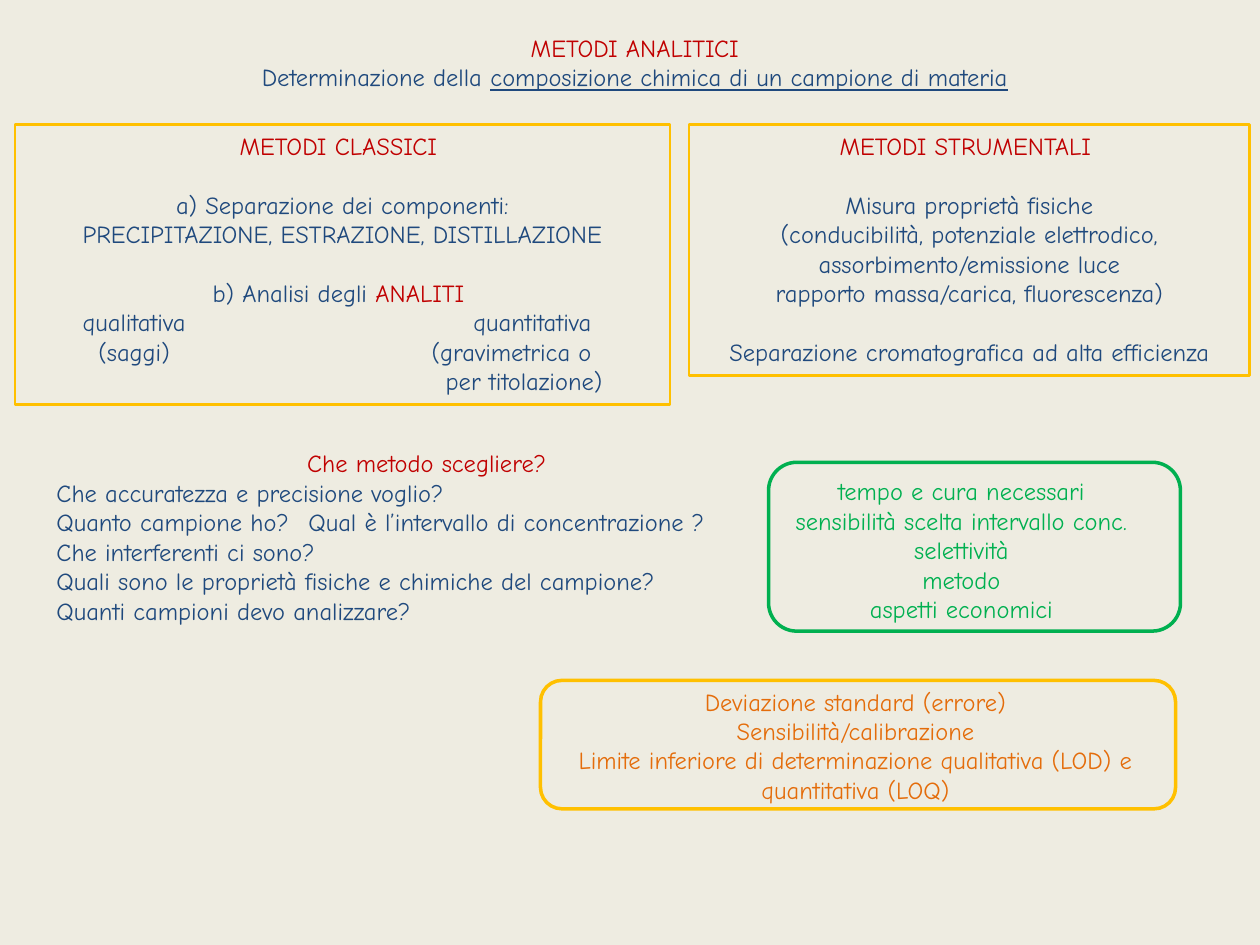
from dataclasses import dataclass

from lxml.etree import SubElement
from pptx import Presentation
from pptx.dml.color import RGBColor
from pptx.enum.shapes import MSO_SHAPE as Shape
from pptx.enum.text import MSO_ANCHOR as Anchor, PP_ALIGN as Align
from pptx.oxml.ns import qn
from pptx.util import Pt


@dataclass(frozen=True)
class Theme:
    font: str = "Comic Neue"
    size: float = 14
    line_height: float = 16.8
    background: str = "EEECE1"
    red: str = "C00000"
    blue: str = "1F497D"
    green: str = "00B050"
    orange: str = "E46C0A"
    yellow: str = "FFC000"


@dataclass(frozen=True)
class Line:
    """One paragraph: runs are (text, colour) or (text, colour, underline)."""
    runs: tuple
    align: Align = Align.CENTER
    gap: bool = False
    tabs: tuple = ()


THEME = Theme()
RED, BLUE, GREEN, ORANGE = THEME.red, THEME.blue, THEME.green, THEME.orange


def plain(text, color=BLUE, **options):
    return Line(((text, color),), **options)


def columns(text, right_edge=322.4):
    """Line set on a centred tab and a right tab."""
    return plain(text, align=Align.LEFT, tabs=((61, "ctr"), (right_edge, "r")))


TITLE = [
    plain("METODI ANALITICI", RED),
    Line((("Determinazione della ", BLUE),
          ("composizione chimica di un campione di materia", BLUE, True))),
]
CLASSICAL = [
    plain("METODI CLASSICI ", RED),
    plain("a) Separazione dei componenti:", gap=True),
    plain("PRECIPITAZIONE, ESTRAZIONE, DISTILLAZIONE"),
    Line((("b) Analisi degli ", BLUE), ("ANALITI ", RED)), gap=True),
    columns("\tqualitativa\tquantitativa"),
    columns("\t(saggi)\t(gravimetrica o"),
    columns("\t\tper titolazione)", right_edge=328.7),
]
INSTRUMENTAL = [
    plain("METODI STRUMENTALI ", RED),
    plain("Misura proprietà fisiche", gap=True),
    plain("(conducibilità, potenziale elettrodico,"),
    plain("assorbimento/emissione luce"),
    plain("rapporto massa/carica, fluorescenza)"),
    plain("Separazione cromatografica ad alta efficienza", gap=True),
]
QUESTIONS = [plain("Che metodo scegliere? ", RED)] + [
    plain(text, align=Align.LEFT) for text in (
        "Che accuratezza e precisione voglio?",
        "Quanto campione ho?\tQual è l’intervallo di concentrazione ?",
        "Che interferenti ci sono?",
        "Quali sono le proprietà fisiche e chimiche del campione?",
        "Quanti campioni devo analizzare?",
    )]
CRITERIA = [plain(text, GREEN) for text in (
    "tempo e cura necessari",
    "sensibilità scelta intervallo conc.",
    "selettività",
    "metodo",
    "aspetti economici",
)]
STATISTICS = [plain(text, ORANGE) for text in (
    "Deviazione standard (errore)",
    "Sensibilità/calibrazione",
    "Limite inferiore di determinazione qualitativa (LOD) e quantitativa (LOQ)",
)]


def write(shape, lines):
    frame = shape.text_frame
    frame.word_wrap = True
    frame.vertical_anchor = Anchor.TOP
    for index, line in enumerate(lines):
        paragraph = frame.add_paragraph() if index else frame.paragraphs[0]
        paragraph.alignment = line.align
        if line.gap:
            paragraph.space_before = Pt(THEME.line_height)
        if line.tabs:
            tab_list = SubElement(paragraph._p.get_or_add_pPr(), qn("a:tabLst"))
            for position, kind in line.tabs:
                SubElement(tab_list, qn("a:tab"), pos=str(int(Pt(position))), algn=kind)
        for text, color, *underline in line.runs:
            run = paragraph.add_run()
            run.text = text
            run.font.name = THEME.font
            run.font.size = Pt(THEME.size)
            run.font.color.rgb = RGBColor.from_string(color)
            if underline:
                run.font.underline = True


def add_text(slide, box, lines):
    write(slide.shapes.add_textbox(*map(Pt, box)), lines)


def add_outline(slide, kind, box, color, width):
    shape = slide.shapes.add_shape(kind, *map(Pt, box))
    shape.shadow.inherit = False
    shape.fill.background()
    shape.line.color.rgb = RGBColor.from_string(color)
    shape.line.width = Pt(width)
    return shape


def main():
    presentation = Presentation()
    presentation.slide_width, presentation.slide_height = Pt(720), Pt(540)
    slide = presentation.slides.add_slide(presentation.slide_layouts[6])
    slide.background.fill.solid()
    slide.background.fill.fore_color.rgb = RGBColor.from_string(THEME.background)

    add_text(slide, (127.4, 15.1, 470.9, 41), TITLE)
    for box, lines in (((8.6, 71.3, 374.4, 159.8), CLASSICAL),
                       ((393.8, 71.3, 320.4, 143.3), INSTRUMENTAL)):
        write(add_outline(slide, Shape.RECTANGLE, box, THEME.yellow, 1.5), lines)

    add_text(slide, (25.2, 252.7, 442.1, 108.7), QUESTIONS)
    add_text(slide, (434.9, 268.6, 229, 92.2), CRITERIA)
    add_outline(slide, Shape.ROUNDED_RECTANGLE, (439.2, 264.2, 235.4, 96.5), GREEN, 2)
    add_text(slide, (308.9, 388.8, 360, 74.9), STATISTICS)
    add_outline(slide, Shape.ROUNDED_RECTANGLE, (308.9, 388.8, 362.9, 73.4), THEME.yellow, 2)
    presentation.save("out.pptx")


if __name__ == "__main__":
    main()
